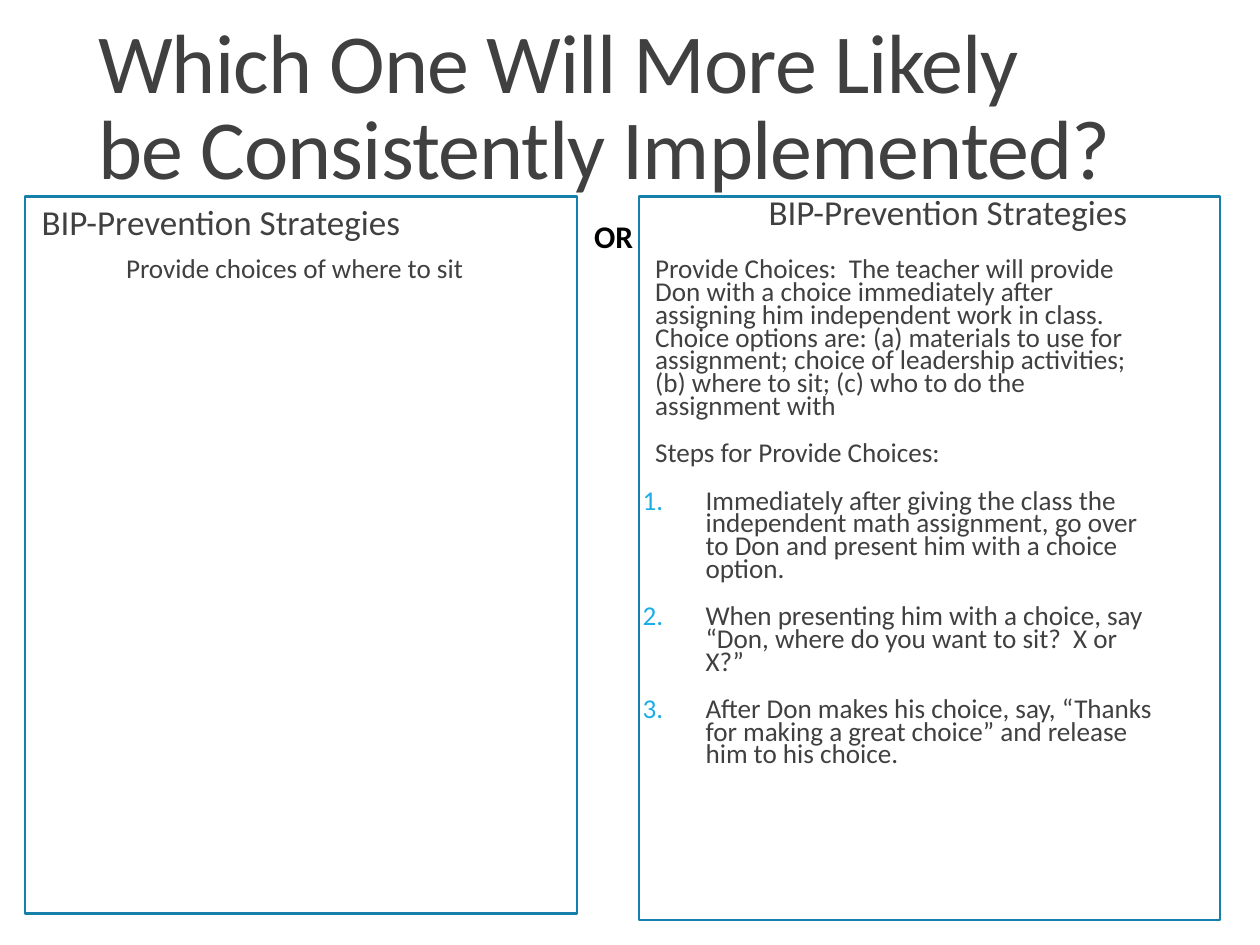
from dataclasses import dataclass

from lxml import etree
from pptx import Presentation
from pptx import util as u
from pptx.dml.color import RGBColor
from pptx.enum import shapes, text
from pptx.oxml.ns import qn


@dataclass(frozen=True)
class Theme:
    font: str = "Calibri"
    body: RGBColor = RGBColor(0x40, 0x40, 0x40)
    strong: RGBColor = RGBColor(0, 0, 0)
    accent: str = "1CADE4"
    frame: RGBColor = RGBColor(0x15, 0x80, 0xA9)
    frame_width: float = 1.25
    title_size: float = 48
    heading_size: float = 20
    label_size: float = 18
    text_size: float = 15.5


def apply(target, values):
    for name, value in values.items():
        setattr(target, name, value)


class SlideBuilder:
    """Holds the theme and the current slide, and adds each kind of element."""

    def __init__(self, slide, theme):
        self.slide = slide
        self.theme = theme

    def text_box(self, box, paragraphs, size, frame_format=None, font_format=None, **paragraph_format):
        shape = self.slide.shapes.add_textbox(*map(u.Inches, box))
        frame = shape.text_frame
        apply(frame, {"word_wrap": True, **(frame_format or {})})
        font_values = {"name": self.theme.font, "size": u.Pt(size), **(font_format or {})}
        for index, (content, indent, numbered) in enumerate(paragraphs):
            paragraph = frame.paragraphs[0] if index == 0 else frame.add_paragraph()
            paragraph.text = content
            apply(paragraph, paragraph_format)
            if index == 0:
                paragraph.space_before = u.Pt(0)
            self.indent(paragraph, indent, numbered)
            font = paragraph.runs[0].font
            apply(font, font_values)
            font.color.rgb = self.theme.body
        return frame

    def indent(self, paragraph, indent, numbered):
        properties = paragraph._p.get_or_add_pPr()
        properties.set("marL", str(u.Inches(indent)))
        properties.set("indent", str(-u.Inches(indent) if numbered else 0))
        if numbered:
            color = etree.SubElement(properties, qn("a:buClr"))
            etree.SubElement(color, qn("a:srgbClr"), val=self.theme.accent)
            etree.SubElement(properties, qn("a:buFont"), typeface=self.theme.font)
            etree.SubElement(properties, qn("a:buAutoNum"), type="arabicPeriod")

    def title(self, box, content):
        frame = self.text_box(box, [(content, 0, False)], self.theme.title_size,
                              {"vertical_anchor": text.MSO_ANCHOR.BOTTOM}, line_spacing=0.85)
        frame.paragraphs[0].runs[0]._r.get_or_add_rPr().set("spc", "-50")

    def heading(self, box, content):
        self.text_box(box, [(content, 0.1, False)], self.theme.heading_size,
                      {"margin_left": 0, "margin_right": 0}, line_spacing=0.9)

    def body(self, box, plain, steps=()):
        paragraphs = [(content, 0.1, False) for content in plain]
        paragraphs += [(content, 0.5, True) for content in steps]
        self.text_box(box, paragraphs, self.theme.text_size,
                      {"margin_left": 0, "margin_right": 0}, line_spacing=0.7,
                      space_before=u.Pt(12), space_after=u.Pt(2))

    def label(self, box, content):
        frame = self.text_box(box, [(content, 0, False)], self.theme.label_size,
                              font_format={"bold": True}, alignment=text.PP_ALIGN.CENTER)
        frame.paragraphs[0].runs[0].font.color.rgb = self.theme.strong

    def outline(self, box):
        shape = self.slide.shapes.add_shape(shapes.MSO_SHAPE.RECTANGLE, *map(u.Inches, box))
        shape.shadow.inherit = False
        shape.fill.background()
        shape.line.color.rgb = self.theme.frame
        shape.line.width = u.Pt(self.theme.frame_width)


def main():
    presentation = Presentation()
    apply(presentation, {"slide_width": u.Inches(10), "slide_height": u.Inches(7.5)})
    slide = presentation.slides.add_slide(presentation.slide_layouts[6])
    builder = SlideBuilder(slide, Theme())

    builder.title((0.68, 0.02, 8.25, 1.59), "Which One Will More Likely be Consistently Implemented?")
    builder.body((0.9, 2.02, 4.05, 4.4), ["Provide choices of where to sit"])
    builder.body(
        (5.1, 2.02, 4.05, 4.4),
        ["Provide Choices:  The teacher will provide Don with a choice immediately after "
         "assigning him independent work in class.  Choice options are: (a) materials to use "
         "for assignment; choice of leadership activities; (b) where to sit; (c) who to do "
         "the assignment with",
         "Steps for Provide Choices:"],
        ["Immediately after giving the class the independent math assignment, go over to Don "
         "and present him with a choice option.",
         "When presenting him with a choice, say “Don, where do you want to sit?  X or X?”",
         "After Don makes his choice, say, “Thanks for making a great choice” and release him "
         "to his choice."])
    for left, top in ((0.23, 1.58), (6, 1.5)):
        builder.heading((left, top, 4, 0.7), "BIP-Prevention Strategies")
    builder.label((4.33, 1.67, 1.08, 0.4), "OR")
    for box in ((0.2, 1.56, 4.38, 5.69), (5.07, 1.56, 4.61, 5.74)):
        builder.outline(box)

    presentation.save("out.pptx")


if __name__ == "__main__":
    main()
